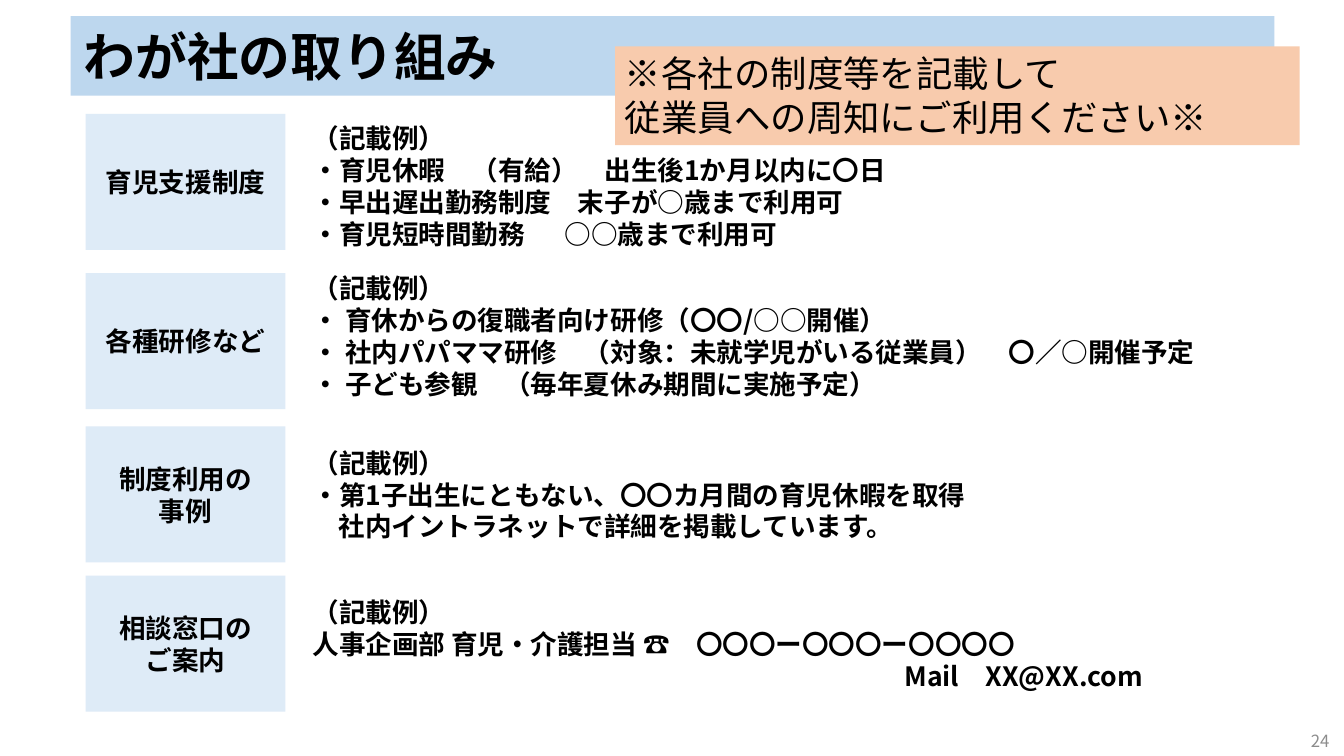
import pptx
import pptx.util
import pptx.dml.color
import pptx.enum.shapes
import pptx.enum.text
import pptx.oxml.ns
import lxml.etree

Inches = pptx.util.Inches
Pt = pptx.util.Pt
RGBColor = pptx.dml.color.RGBColor
ALIGN = pptx.enum.text.PP_ALIGN
ANCHOR = pptx.enum.text.MSO_ANCHOR

BLACK = RGBColor(0x00, 0x00, 0x00)
GRAY = RGBColor(0x8C, 0x8C, 0x8C)
TITLE_BLUE = RGBColor(0xBD, 0xD7, 0xEE)
LABEL_BLUE = RGBColor(0xDE, 0xEB, 0xF7)
NOTE_ORANGE = RGBColor(0xF8, 0xCB, 0xAD)
FONT = "Noto Sans CJK JP"
LINE_RATIO = 1.2
EXAMPLE = "（記載例）"

# Label, label top, list top, lines; a line is its text or (text, left indent).
SECTIONS = [
    ("育児支援制度", 1.13, 1.17, [
        EXAMPLE,
        "・育児休暇　（有給）　出生後1か月以内に〇日",
        "・早出遅出勤務制度　末子が○歳まで利用可",
        "・育児短時間勤務\t○○歳まで利用可"]),
    ("各種研修など", 2.71, 2.66, [
        EXAMPLE,
        "・ 育休からの復職者向け研修（〇〇/○○開催）",
        "・ 社内パパママ研修　（対象：未就学児がいる従業員）　〇／○開催予定",
        "・ 子ども参観　（毎年夏休み期間に実施予定）"]),
    ("制度利用の\n事例", 4.23, 4.23, [
        EXAMPLE,
        "・第1子出生にともない、〇〇カ月間の育児休暇を取得",
        ("社内イントラネットで詳細を掲載しています。", 0.26)]),
    ("相談窓口の\nご案内", 5.71, 5.71, [
        EXAMPLE,
        "人事企画部 育児・介護担当 ☎　〇〇〇ー〇〇〇ー〇〇〇〇",
        ("Mail　XX@XX.com", 5.87)]),
]
ROW_HEIGHT = 1.35
LABEL_LEFT, LABEL_WIDTH = 0.85, 1.98
LIST_LEFT, LIST_WIDTH = 2.97, 9.38
TAB_STOP = 2.9


def place(sp, box):
    sp.left, sp.top, sp.width, sp.height = (Inches(v) for v in box)


def add_paragraph_xml(p, tag, **attrs):
    return lxml.etree.SubElement(p._p.get_or_add_pPr(),
                                 pptx.oxml.ns.qn(tag), **attrs)


def format_text(sp, size, bold=False, color=BLACK, align=ALIGN.LEFT,
                anchor=ANCHOR.MIDDLE, margins=(0.13, 0.07)):
    """Format the whole text of a shape; margins are (sides, top and bottom)."""
    tf = sp.text_frame
    tf.word_wrap = True
    tf.auto_size = pptx.enum.text.MSO_AUTO_SIZE.NONE
    tf.vertical_anchor = anchor
    tf.margin_left = tf.margin_right = Inches(margins[0])
    tf.margin_top = tf.margin_bottom = Inches(margins[1])
    for p in tf.paragraphs:
        p.alignment = align
        p.line_spacing = Pt(round(size * LINE_RATIO, 1))
        p.space_before = p.space_after = Pt(0)
        for r in p.runs:
            r.font.size = Pt(size)
            r.font.bold = bold
            r.font.color.rgb = color
            r.font.name = FONT
            lxml.etree.SubElement(r.font._element, pptx.oxml.ns.qn("a:ea"),
                                  typeface=FONT)


def add_title(s, box):
    sp = s.shapes.title
    place(sp, box)
    sp.fill.solid()
    sp.fill.fore_color.rgb = TITLE_BLUE
    sp.text_frame.text = "わが社の取り組み"
    format_text(sp, 37, bold=True, margins=(0.13, 0.13))


def add_panel(s, box, text, color):
    sp = s.shapes.add_shape(pptx.enum.shapes.MSO_SHAPE.RECTANGLE,
                            *(Inches(v) for v in box))
    sp.shadow.inherit = False
    sp.fill.solid()
    sp.fill.fore_color.rgb = color
    sp.line.fill.background()
    sp.text_frame.text = text
    return sp


def fill_list(sp, box, lines):
    place(sp, box)
    lines = [(line, 0) if isinstance(line, str) else line for line in lines]
    sp.text_frame.text = "\n".join(text for text, _ in lines)
    format_text(sp, 19, bold=True)
    for p, (text, indent) in zip(sp.text_frame.paragraphs, lines):
        pPr = p._p.get_or_add_pPr()
        pPr.set("marL", str(Inches(indent)))
        pPr.set("indent", "0")
        add_paragraph_xml(p, "a:buNone")
        if "\t" in text:
            tabs = add_paragraph_xml(p, "a:tabLst")
            lxml.etree.SubElement(tabs, pptx.oxml.ns.qn("a:tab"),
                                  pos=str(Inches(TAB_STOP)), algn="l")


def add_sections(s):
    bodies = [sp for sp in s.placeholders if sp.placeholder_format.idx in range(1, 5)]
    for body, (label, label_top, list_top, lines) in zip(bodies, SECTIONS):
        sp = add_panel(s, (LABEL_LEFT, label_top, LABEL_WIDTH, ROW_HEIGHT),
                       label, LABEL_BLUE)
        format_text(sp, 19, bold=True, align=ALIGN.CENTER)
        fill_list(body, (LIST_LEFT, list_top, LIST_WIDTH, ROW_HEIGHT), lines)


def add_note(s, box):
    sp = add_panel(s, box, "※各社の制度等を記載して\n従業員への周知にご利用ください※",
                   NOTE_ORANGE)
    format_text(sp, 26, anchor=ANCHOR.TOP, margins=(0.1, 0.05))


def add_page_number(s, box):
    sp = s.shapes.add_textbox(*(Inches(v) for v in box))
    sp.text_frame.text = "24"
    format_text(sp, 12, color=GRAY, align=ALIGN.CENTER, anchor=ANCHOR.TOP,
                margins=(0.05, 0.05))


def main():
    prs = pptx.Presentation()
    prs.slide_width, prs.slide_height = Inches(13.33), Inches(7.5)
    s = prs.slides.add_slide(prs.slide_layouts.get_by_name("Comparison"))
    add_title(s, (0.7, 0.16, 11.94, 0.79))
    add_sections(s)
    add_note(s, (6.1, 0.46, 6.79, 0.98))
    add_page_number(s, (12.88, 7.2, 0.43, 0.25))
    prs.save("out.pptx")


if __name__ == "__main__":
    main()
